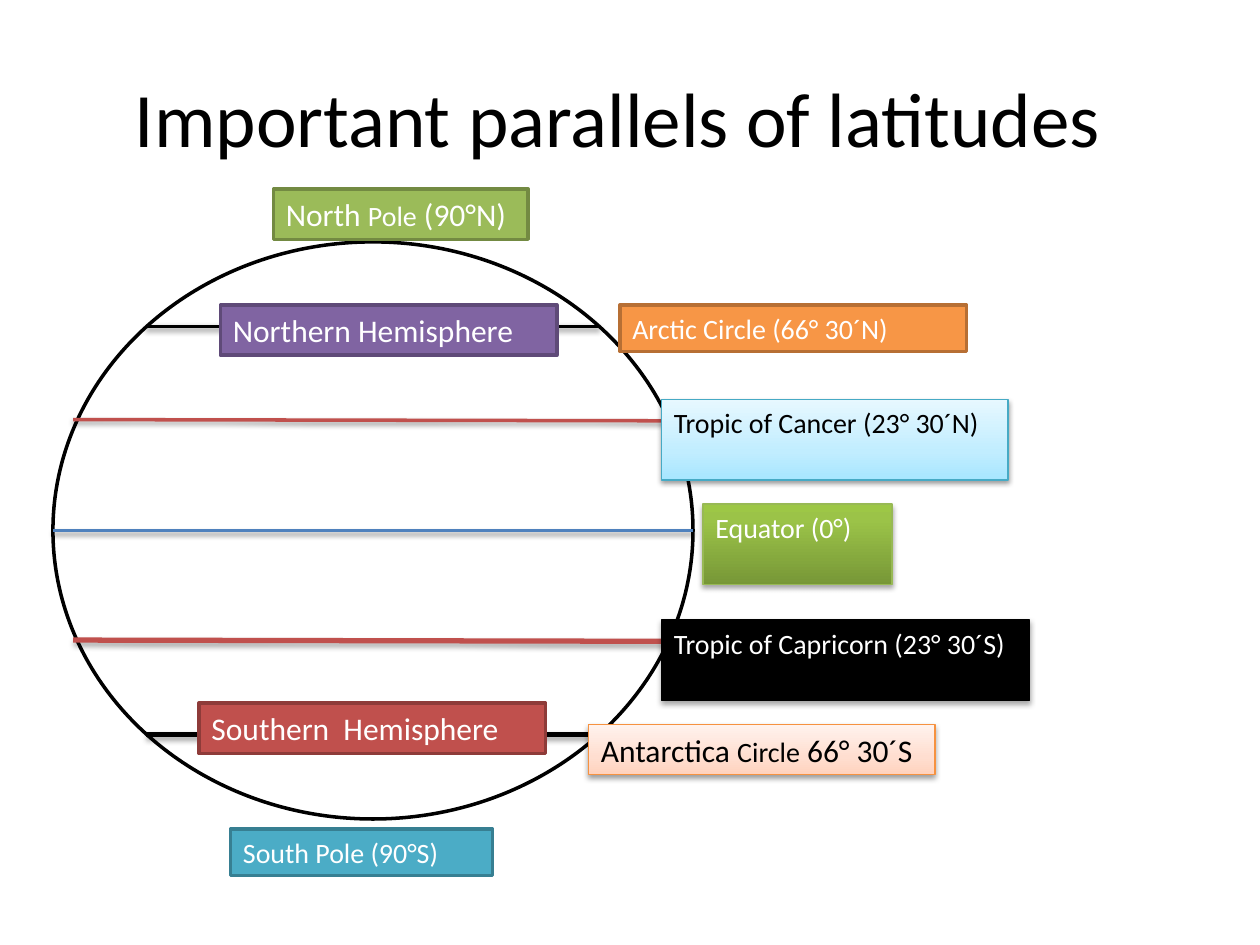
from copy import deepcopy

from lxml.etree import SubElement
from pptx import Presentation
from pptx.dml.color import RGBColor
from pptx.enum.shapes import MSO_CONNECTOR, MSO_SHAPE
from pptx.enum.text import MSO_ANCHOR, PP_ALIGN
from pptx.oxml.ns import qn
from pptx.util import Inches, Pt

FONT = "Calibri"
COLORS = {
    "black": "000000", "white": "FFFFFF", "blue": "4F81BD", "red": "C0504D",
    "dark red": "8E3B39", "green": "9BBB59", "dark green": "738A42",
    "lime": "98B955", "orange": "F79646", "dark orange": "B76F34",
    "peach": "F69240", "teal": "4BACC6", "dark teal": "377F92",
    "aqua": "46AAC5", "purple": "8064A2", "dark purple": "5F4A78",
}
GRADIENTS = {
    "lime fade": [(0, "779737"), (0.8, "9BC348"), (1, "9DC746")],
    "aqua fade": [(0, "A7E6FF"), (0.35, "C1EDFF"), (1, "E7F8FF")],
    "peach fade": [(0, "FFD2BD"), (0.35, "FFDED0"), (1, "FFF2ED")],
}
LIGHT_SHADOW = (1.6, 38)
DEEP_SHADOW = (1.8, 35)

TITLE = " Important parallels of latitudes"
GLOBE = (0.42, 1.92, 5.08, 4.58)
PARALLELS = [
    ((0.42, 4.21), (5.5, 4.21), "blue", 2, LIGHT_SHADOW),
    ((0.58, 3.33), (5.33, 3.34), "red", 2, LIGHT_SHADOW),
    ((0.58, 5.08), (5.33, 5.09), "red", 3, DEEP_SHADOW),
    ((1.16, 2.59), (4.76, 2.59), "black", 2, LIGHT_SHADOW),
    ((1.16, 5.83), (4.76, 5.83), "black", 3, DEEP_SHADOW),
]
LABELS = [
    ((5.58, 4, 1.5, 0.64), "lime fade", "lime", 0.75, DEEP_SHADOW, "white",
     [("Equator (0°)", 16)]),
    ((5.25, 3.17, 2.75, 0.64), "aqua fade", "aqua", 0.75, LIGHT_SHADOW, "black",
     [("Tropic of Cancer (23° 30´N)", 16)]),
    ((5.25, 4.92, 2.92, 0.64), "black", "black", 0.75, DEEP_SHADOW, "white",
     [("Tropic of Capricorn (23° 30´S)", 16)]),
    ((4.92, 2.42, 2.75, 0.37), "orange", "dark orange", 2, None, "white",
     [("Arctic Circle (66° 30´N)", 16)]),
    ((4.67, 5.75, 2.75, 0.4), "peach fade", "peach", 0.75, LIGHT_SHADOW, "black",
     [("Antarctica ", 18), ("Circle", 16), (" 66° 30´S", 18)]),
    ((2.17, 1.5, 2.02, 0.4), "green", "dark green", 2, None, "white",
     [("North ", 18), ("Pole", 16), (" (90°N)", 18)]),
    ((1.83, 6.58, 2.08, 0.37), "teal", "dark teal", 2, None, "white",
     [("South Pole (90°S)", 16)]),
    ((1.75, 2.42, 2.67, 0.4), "purple", "dark purple", 2, None, "white",
     [("Northern Hemisphere", 18)]),
    ((1.58, 5.58, 2.75, 0.4), "red", "dark red", 2, None, "white",
     [("Southern  Hemisphere", 18)]),
]


def color(name):
    return RGBColor.from_string(COLORS[name])


def set_line(shape, name, width):
    shape.line.color.rgb = color(name)
    shape.line.width = Pt(width)


def set_fill(shape, name):
    if name not in GRADIENTS:
        shape.fill.solid()
        shape.fill.fore_color.rgb = color(name)
        return
    shape.fill.gradient()
    shape.fill.gradient_angle = 90
    stop_list = shape._element.spPr.find(f".//{qn('a:gsLst')}")
    stop_list.append(deepcopy(stop_list[-1]))
    for stop, (position, value) in zip(shape.fill.gradient_stops, GRADIENTS[name]):
        stop.position = position
        stop.color.rgb = RGBColor.from_string(value)


def set_shadow(shape, shadow):
    properties = shape._element.spPr
    effects = properties.find(qn("a:effectLst"))
    if effects is None:
        effects = SubElement(properties, qn("a:effectLst"))
    if shadow:
        distance, opacity = shadow
        outer = SubElement(effects, qn("a:outerShdw"), blurRad=str(Pt(3.1)),
                           dist=str(Pt(distance)), dir="5400000", rotWithShape="0")
        black = SubElement(outer, qn("a:srgbClr"), val=COLORS["black"])
        SubElement(black, qn("a:alpha"), val=str(opacity * 1000))


def add_box(page, kind, place, fill, line, width, shadow=None):
    box = page.shapes.add_shape(kind, *map(Inches, place))
    box.shadow.inherit = False
    set_fill(box, fill)
    set_line(box, line, width)
    set_shadow(box, shadow)
    return box


def add_title(page):
    title = page.shapes.title
    title.left, title.top, title.width, title.height = map(Inches, (0.17, 0.3, 9.33, 1.25))
    title.text_frame.text = TITLE
    title.text_frame.vertical_anchor = MSO_ANCHOR.MIDDLE
    para = title.text_frame.paragraphs[0]
    para.alignment = PP_ALIGN.CENTER
    para.font.name, para.font.size = FONT, Pt(44)
    para.font.color.rgb = color("black")


def add_parallel(page, start, end, name, width, shadow):
    parallel = page.shapes.add_connector(
        MSO_CONNECTOR.STRAIGHT, *map(Inches, start + end))
    set_line(parallel, name, width)
    set_shadow(parallel, shadow)


def add_label(page, place, fill, line, width, shadow, text_color, spans):
    box = add_box(page, MSO_SHAPE.RECTANGLE, place, fill, line, width, shadow)
    frame = box.text_frame
    frame.word_wrap = True
    frame.vertical_anchor = MSO_ANCHOR.TOP
    para = frame.paragraphs[0]
    para.alignment = PP_ALIGN.LEFT
    para.font.name = FONT
    para.font.color.rgb = color(text_color)
    for text, size in spans:
        span = para.add_run()
        span.text = text
        span.font.size = Pt(size)


def main():
    deck = Presentation()
    deck.slide_width, deck.slide_height = Inches(10), Inches(7.5)
    page = deck.slides.add_slide(deck.slide_layouts[5])
    add_title(page)
    add_box(page, MSO_SHAPE.OVAL, GLOBE, "white", "black", 2)
    for parallel in PARALLELS:
        add_parallel(page, *parallel)
    for label in LABELS:
        add_label(page, *label)
    deck.save("out.pptx")


if __name__ == "__main__":
    main()
